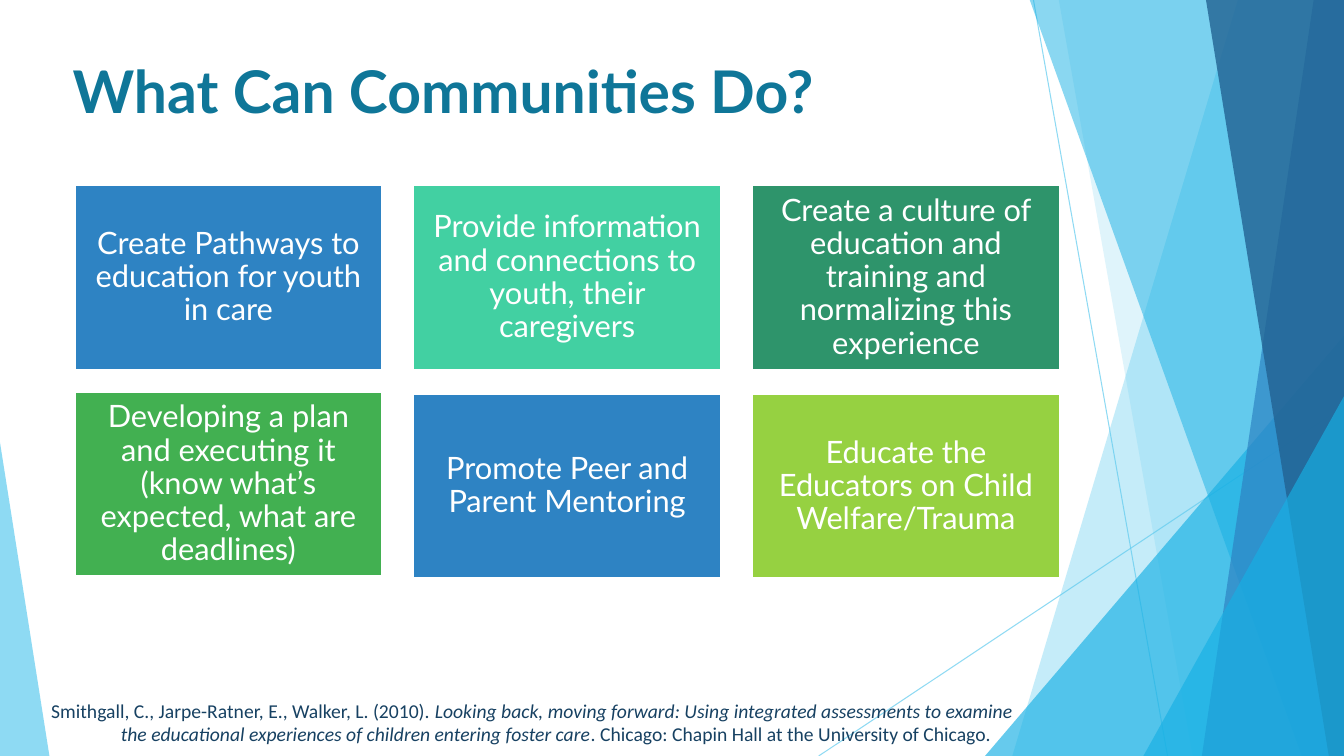
from pptx import Presentation, util as u
from pptx.dml.color import RGBColor
from pptx.enum import shapes, text
from pptx.oxml.ns import qn
from lxml import etree

PX = 9144  # 100 px to the inch
WIDE, HIGH = 1333, 750
SKY = RGBColor(0x5F, 0xCB, 0xEF)
CYAN = RGBColor(0x17, 0xB0, 0xE4)
BLUE = RGBColor(0x2E, 0x83, 0xC3)
NAVY = RGBColor(0x22, 0x62, 0x92)
TEAL = RGBColor(0x0F, 0x76, 0x98)
INK = RGBColor(0x17, 0x41, 0x62)
MINT = RGBColor(0x42, 0xD0, 0xA2)
PINE = RGBColor(0x2E, 0x94, 0x6B)
GREEN = RGBColor(0x42, 0xB0, 0x51)
LIME = RGBColor(0x96, 0xD1, 0x41)
WHITE = RGBColor(0xFF, 0xFF, 0xFF)


def px(*nums):
    return [n * PX for n in nums]


def tint(fill, color, alpha):
    """Fill with a colour at an opacity given in percent."""
    fill.solid()
    fill.fore_color.rgb = color
    tone = fill._xPr.find(qn("a:solidFill"))[0]
    etree.SubElement(tone, qn("a:alpha"), val=str(alpha * 1000))


deck = Presentation()
deck.slide_width, deck.slide_height = px(WIDE, HIGH)
slide = deck.slides.add_slide(deck.slide_layouts[5])
items = slide.shapes

# Thin lines behind the facets
for ends in [(1025, 0, 1158, HIGH), (WIDE, 403, 812, HIGH)]:
    line = items.add_connector(shapes.MSO_CONNECTOR.STRAIGHT, *px(*ends))
    line.line.width = u.Pt(0.75)
    tint(line.line.fill, SKY, 70)
    etree.SubElement(line._element.spPr, qn("a:effectLst"))

# Facets: bands (top x, foot x) reach the right edge;
# triangles are (left, top, width, height, apex)
facets = [
    (SKY, 36, (1228, 1004)),
    (SKY, 20, (1050, 1183)),
    (CYAN, 66, (977, 333, 356, 417, 1)),
    (CYAN, 50, (1021, 1291)),
    (BLUE, 70, (1303, 1192)),
    (NAVY, 80, (1196, 1318)),
    (CYAN, 66, (1134, 393, 199, 357, 1)),
    (SKY, 70, (0, 439, 49, 311, 0)),
]
for color, alpha, form in facets:
    if len(form) == 2:
        top, foot = form
        path = items.build_freeform(top, -1, scale=PX)
        path.add_line_segments([(WIDE, -1), (WIDE, HIGH), (foot, HIGH)])
        facet = path.convert_to_shape()
    else:
        *box, apex = form
        facet = items.add_shape(shapes.MSO_SHAPE.ISOSCELES_TRIANGLE, *px(*box))
        facet.adjustments[0] = apex
    facet.shadow.inherit = False
    facet.line.fill.background()
    tint(facet.fill, color, alpha)

# Title, brought in front of the facets
title = items.title
items._spTree.append(title._element)
title.left, title.top, title.width, title.height = px(62, 52, 940, 74)
title.text_frame.text = "What Can Communities Do?"
title.text_frame.vertical_anchor = text.MSO_ANCHOR.MIDDLE
head = title.text_frame.paragraphs[0]
head.alignment = text.PP_ALIGN.LEFT
font = head.runs[0].font
font.name, font.size, font.bold = "Lato", u.Pt(42), True
font.color.rgb = TEAL

# Tiles in a grid of three columns
tiles = [
    (BLUE, 184, "Create Pathways to education for youth in care"),
    (MINT, 184, "Provide information and connections to youth, their caregivers"),
    (PINE, 184, "Create a culture of education and training and normalizing this experience"),
    (GREEN, 389, "Developing a plan and executing it (know what’s expected, what are deadlines)"),
    (BLUE, 391, "Promote Peer and Parent Mentoring"),
    (LIME, 391, "Educate the Educators on Child Welfare/Trauma"),
]
for i, (color, top, words) in enumerate(tiles):
    left = 74 + i % 3 * 336
    tile = items.add_shape(shapes.MSO_SHAPE.RECTANGLE, *px(left, top, 305, 183))
    tile.shadow.inherit = False
    tile.fill.solid()
    tile.fill.fore_color.rgb = color
    tile.line.color.rgb = WHITE
    tile.line.width = u.Pt(1.5)
    frame = tile.text_frame
    frame.text = words
    frame.word_wrap = True
    frame.vertical_anchor = text.MSO_ANCHOR.MIDDLE
    frame.margin_left, frame.margin_top, frame.margin_right, frame.margin_bottom = px(9, 9, 9, 9)
    para = frame.paragraphs[0]
    para.alignment = text.PP_ALIGN.CENTER
    para.line_spacing = 0.9
    font = para.runs[0].font
    font.name, font.size = "Lato", u.Pt(22)
    font.color.rgb = WHITE

# Source with a hanging indent
note = items.add_textbox(*px(41, 688, 977, 57))
note.text_frame.word_wrap = True
para = note.text_frame.paragraphs[0]
props = para._p.get_or_add_pPr()
props.set("marL", str(69 * PX))
props.set("indent", str(-69 * PX))
parts = [
    ("Smithgall, C., Jarpe-Ratner, E., Walker, L. (2010). ", False),
    ("Looking back, moving forward: Using integrated assessments to examine "
     "the educational experiences of children entering foster care", True),
    (". Chicago: Chapin Hall at the University of Chicago.", False),
]
for words, slant in parts:
    run = para.add_run()
    run.text = words
    run.font.name, run.font.size, run.font.italic = "Calibri", u.Pt(14), slant
    run.font.color.rgb = INK

deck.save("out.pptx")
